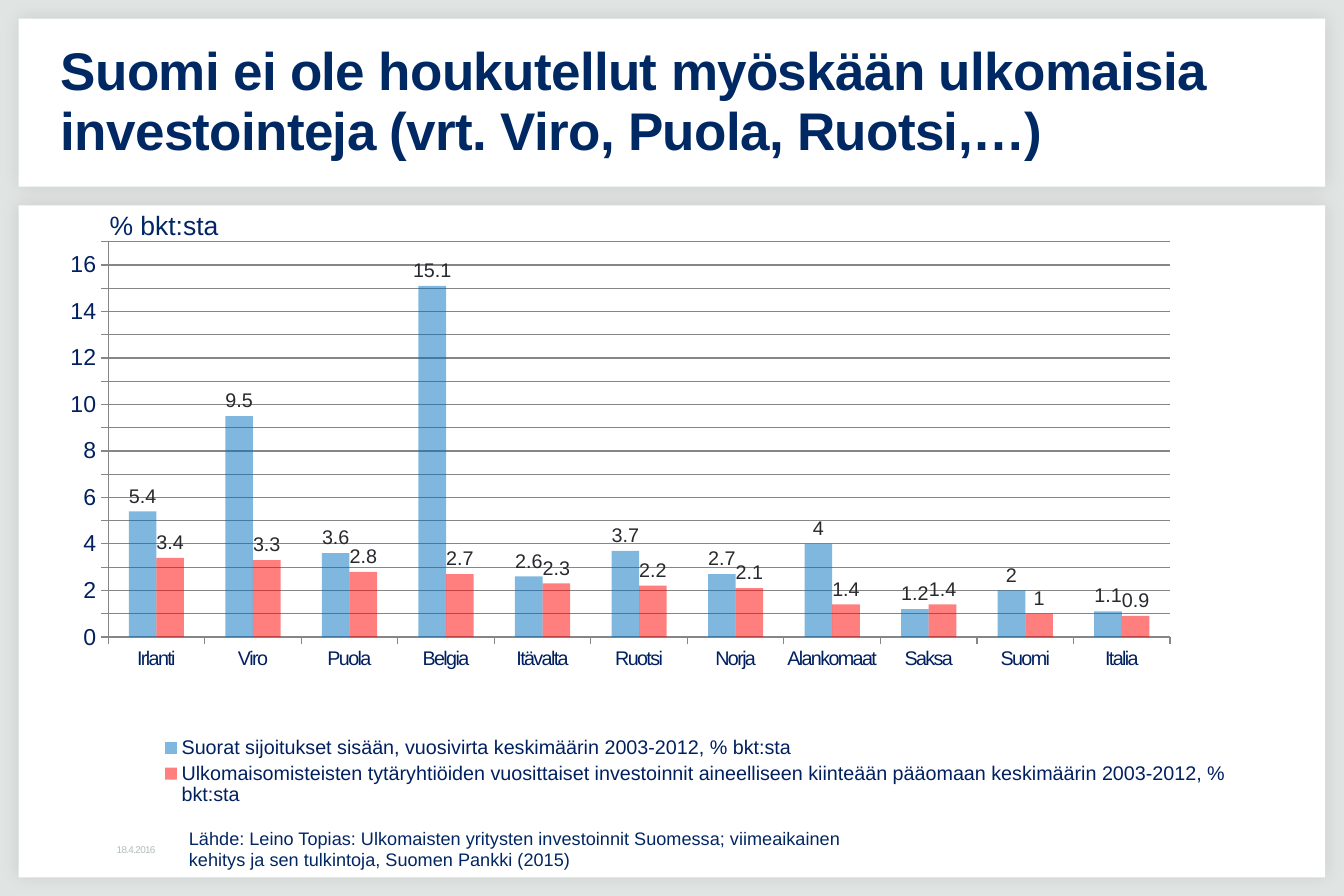
from lxml.etree import SubElement
from pptx import Presentation
from pptx.chart.data import CategoryChartData
from pptx.dml.color import RGBColor
from pptx.enum.chart import XL_CHART_TYPE, XL_LABEL_POSITION, XL_LEGEND_POSITION, XL_TICK_MARK
from pptx.enum.shapes import MSO_SHAPE
from pptx.enum.text import MSO_ANCHOR
from pptx.oxml import parse_xml
from pptx.oxml.ns import nsdecls, qn
from pptx.util import Inches, Pt

COLUMNS, ROWS = 72, 48
CELL = Inches(11.34) // COLUMNS

BACKGROUND = RGBColor(0xE0, 0xE5, 0xE3)
WHITE = RGBColor(0xFF, 0xFF, 0xFF)
TITLE_NAVY = RGBColor(0x00, 0x29, 0x64)
TEXT_NAVY = RGBColor(0x00, 0x26, 0x64)
AXIS_NAVY = RGBColor(0x00, 0x20, 0x60)
LABEL_DARK = RGBColor(0x29, 0x28, 0x2E)
DATE_GREY = RGBColor(0xB1, 0xBE, 0xB9)
GRID_GREY = RGBColor(0x86, 0x86, 0x86)
BLUE = RGBColor(0x00, 0x70, 0xC0)
RED = RGBColor(0xFF, 0x00, 0x00)

COUNTRIES = ["Irlanti", "Viro", "Puola", "Belgia", "Itävalta", "Ruotsi",
             "Norja", "Alankomaat", "Saksa", "Suomi", "Italia"]
INVESTMENTS = [
    ("Suorat sijoitukset sisään, vuosivirta keskimäärin 2003-2012, % bkt:sta",
     [5.4, 9.5, 3.6, 15.1, 2.6, 3.7, 2.7, 4, 1.2, 2, 1.1], BLUE),
    ("Ulkomaisomisteisten tytäryhtiöiden vuosittaiset investoinnit aineelliseen "
     "kiinteään pääomaan keskimäärin 2003-2012, % bkt:sta",
     [3.4, 3.3, 2.8, 2.7, 2.3, 2.2, 2.1, 1.4, 1.4, 1, 0.9], RED),
]


def grid(*cells):
    return [round(CELL * count) for count in cells]


def set_values(target, values):
    for name, value in values.items():
        setattr(target, name, value)


def set_font(font, size, color, bold=False):
    set_values(font, {"name": "Arial", "size": Pt(size), "bold": bold})
    font.color.rgb = color


def add_panel(page, area):
    panel = page.shapes.add_shape(MSO_SHAPE.RECTANGLE, *grid(*area))
    panel.fill.solid()
    panel.fill.fore_color.rgb = WHITE
    panel.line.fill.background()
    panel.shadow.inherit = False
    effects = panel._element.spPr.find(qn("a:effectLst"))
    effects.append(parse_xml(
        f'<a:outerShdw {nsdecls("a")} blurRad="127000" dist="0" dir="2700000" '
        'rotWithShape="0"><a:srgbClr val="000000"><a:alpha val="10000"/>'
        '</a:srgbClr></a:outerShdw>'))


def add_text(page, area, lines, size, color, bold=False, spacing=0, line_spacing=None, **frame_format):
    box = page.shapes.add_textbox(*grid(*area))
    frame = box.text_frame
    set_values(frame, {"word_wrap": True, **frame_format})
    for index, line in enumerate(lines):
        para = frame.add_paragraph() if index else frame.paragraphs[0]
        para.line_spacing = line_spacing
        span = para.add_run()
        span.text = line
        set_font(span.font, size, color, bold)
        if spacing:
            span._r.get_or_add_rPr().set("spc", str(spacing))


def place_part(part, index, shares, inner=False):
    for old_layout in part.findall(qn("c:layout")):
        part.remove(old_layout)
    layout = parse_xml(f'<c:layout {nsdecls("c")}><c:manualLayout/></c:layout>')
    values = {"layoutTarget": "inner"} if inner else {}
    values.update(xMode="edge", yMode="edge", **dict(zip("xywh", shares)))
    for name, value in values.items():
        SubElement(layout[0], qn(f"c:{name}")).set("val", str(value))
    part.insert(index, layout)


def format_axis(axis, size):
    set_values(axis, {"major_tick_mark": XL_TICK_MARK.OUTSIDE,
                      "minor_tick_mark": XL_TICK_MARK.NONE})
    set_font(axis.tick_labels.font, size, AXIS_NAVY)
    axis.format.line.color.rgb = GRID_GREY
    axis.format.line.width = Pt(0.75)


def format_series(series, color):
    series.format.fill.solid()
    series.format.fill.fore_color.rgb = color
    for fill_color in series._element.spPr.iter(qn("a:srgbClr")):
        SubElement(fill_color, qn("a:alpha")).set("val", "50000")
    labels = series.data_labels
    set_values(labels, {"show_value": True, "position": XL_LABEL_POSITION.OUTSIDE_END})
    set_font(labels.font, 12, LABEL_DARK)


def add_investment_chart(page, area):
    data = CategoryChartData(number_format="General")
    data.categories = COUNTRIES
    for name, values, _ in INVESTMENTS:
        data.add_series(name, values)
    chart = page.shapes.add_chart(XL_CHART_TYPE.COLUMN_CLUSTERED, *grid(*area), data).chart
    set_font(chart.font, 18, LABEL_DARK)
    set_values(chart, {"has_title": False, "has_legend": True})
    set_values(chart.legend, {"position": XL_LEGEND_POSITION.BOTTOM, "include_in_layout": False})
    set_font(chart.legend.font, 12, AXIS_NAVY)
    set_values(chart.plots[0], {"gap_width": 150, "overlap": 0, "vary_by_categories": False})
    for series, (_, _, color) in zip(chart.plots[0].series, INVESTMENTS):
        format_series(series, color)
    format_axis(chart.category_axis, 12)
    for properties in chart.category_axis._element.iter(qn("a:defRPr")):
        properties.set("spc", "-100")
    format_axis(chart.value_axis, 14)
    set_values(chart.value_axis, {"minimum_scale": 0, "maximum_scale": 17, "major_unit": 1,
                                  "has_major_gridlines": True})
    gridlines = chart.value_axis.major_gridlines.format.line
    gridlines.color.rgb = GRID_GREY
    gridlines.width = Pt(0.75)
    chart_space = chart._chartSpace
    place_part(chart_space.find(".//" + qn("c:plotArea")), 0, (0.044, 0.03, 0.896, 0.668), True)
    place_part(chart_space.find(".//" + qn("c:legend")), 1, (0.08, 0.86, 0.92, 0.13))


def main():
    deck = Presentation()
    set_values(deck, {"slide_width": CELL * COLUMNS, "slide_height": CELL * ROWS})
    page = deck.slides.add_slide(deck.slide_layouts[6])
    page.background.fill.solid()
    page.background.fill.fore_color.rgb = BACKGROUND
    add_panel(page, (1, 1, COLUMNS - 2, 9))
    add_panel(page, (1, 11, COLUMNS - 2, ROWS - 12))
    add_investment_chart(page, (3, 12, 63.5, 31.7))
    add_text(page, (3, 2, 66, 7),
             ["Suomi ei ole houkutellut myöskään ulkomaisia investointeja (vrt. Viro, Puola, Ruotsi,…)"],
             32.2, TITLE_NAVY, bold=True, spacing=-40, line_spacing=0.95,
             vertical_anchor=MSO_ANCHOR.MIDDLE, margin_left=Inches(0.04))
    add_text(page, (9.5, 44, 46.9, 3),
             ["Lähde: Leino Topias: Ulkomaisten yritysten investoinnit Suomessa; viimeaikainen",
              "kehitys ja sen tulkintoja, Suomen Pankki (2015)"], 11, TEXT_NAVY)
    add_text(page, (5.25, 10.9, 7.25, 2.35), ["% bkt:sta"], 16.1, TEXT_NAVY, word_wrap=False)
    margins = dict.fromkeys(["margin_left", "margin_top", "margin_right", "margin_bottom"], Inches(0.04))
    add_text(page, (6, 45, 9, 1), ["18.4.2016"], 6, DATE_GREY, spacing=-40,
             vertical_anchor=MSO_ANCHOR.MIDDLE, **margins)
    deck.save("out.pptx")


if __name__ == "__main__":
    main()
